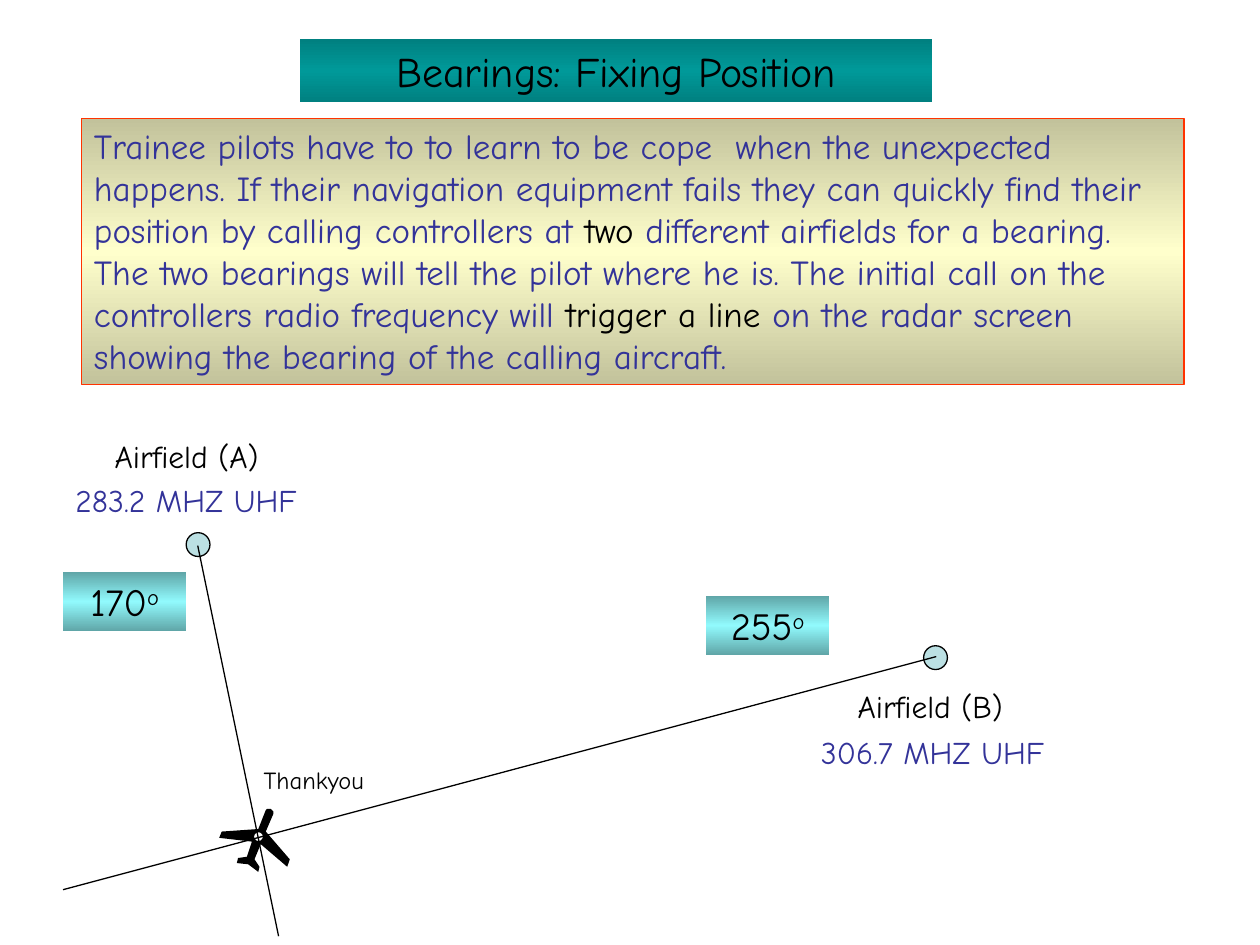
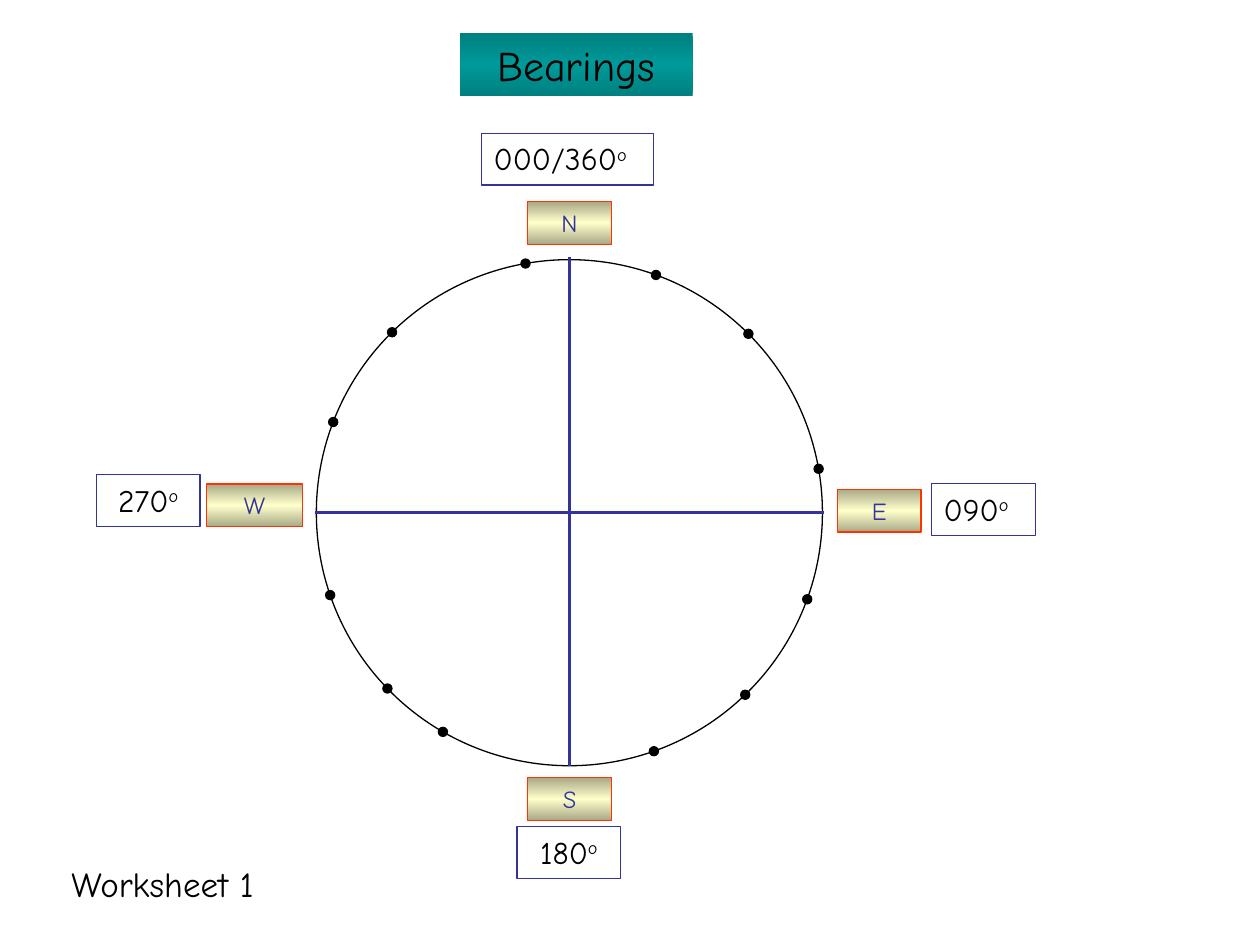
"""Build two slides on fixing a position with bearings."""
from copy import deepcopy
from math import cos, radians, sin

from lxml.etree import SubElement
from pptx import Presentation
from pptx.dml.color import RGBColor
from pptx.enum.shapes import MSO_CONNECTOR, MSO_SHAPE
from pptx.enum.text import MSO_ANCHOR, MSO_AUTO_SIZE, PP_ALIGN
from pptx.oxml.ns import qn
from pptx.util import Pt

COLORS = {
    "ink": "000000", "indigo": "333399", "red": "FF3300", "white": "FFFFFF",
    "airfield": "BBE0E3", "teal_edge": "008080", "teal": "009999",
    "story_edge": "C2C29B", "cream": "FFFFCC", "compass_edge": "A9A987",
    "aqua_edge": "60A6A8", "aqua": "91FAFD",
}
FONT = "Comic Neue"
DEGREE = "o"
LEFT, CENTER = PP_ALIGN.LEFT, PP_ALIGN.CENTER
TITLE_BAND = ("teal_edge", "teal")
STORY_BAND = ("story_edge", "cream")
COMPASS_BAND = ("compass_edge", "cream")
BEARING_BAND = ("aqua_edge", "aqua")


def paint(shape, fill=None, line=None):
    if isinstance(fill, tuple):
        shape.fill.gradient()
        shape.fill.gradient_angle = 90
        stops = shape.fill.gradient_stops
        for stop, name, position in zip(stops, fill, (0, 0.5)):
            stop.color.rgb = RGBColor.from_string(COLORS[name])
            stop.position = position
        stop_list = shape._element.spPr.find(".//" + qn("a:gsLst"))
        last_stop = deepcopy(stop_list[0])
        last_stop.set("pos", "100000")
        stop_list.append(last_stop)
    elif fill:
        shape.fill.solid()
        shape.fill.fore_color.rgb = RGBColor.from_string(COLORS[fill])
    else:
        shape.fill.background()
    if line:
        shape.line.color.rgb = RGBColor.from_string(COLORS[line])
        shape.line.width = Pt(0.75)
    else:
        shape.line.fill.background()


def write(shape, pieces, size, alignment):
    frame = shape.text_frame
    frame.word_wrap = True
    frame.auto_size = MSO_AUTO_SIZE.NONE
    frame.vertical_anchor = MSO_ANCHOR.TOP
    paragraph = frame.paragraphs[0]
    paragraph.alignment = alignment
    for text, color in pieces:
        run = paragraph.add_run()
        run.text = text
        run.font.name = FONT
        run.font.size = Pt(size)
        run.font.color.rgb = RGBColor.from_string(COLORS[color])
        if text == DEGREE:
            run._r.get_or_add_rPr().set("baseline", "30000")


presentation = Presentation()
presentation.slide_width, presentation.slide_height = Pt(720), Pt(540)
title_layout = presentation.slide_layouts[5]
fixing = presentation.slides.add_slide(title_layout)
worksheet = presentation.slides.add_slide(title_layout)

titles = [
    (fixing, "Bearings: Fixing Position", (171.2, 22.4, 361.6, 36)),
    (worksheet, "Bearings", (262.6, 19, 133.2, 36)),
]
for slide, text, box in titles:
    title = slide.shapes.title
    title.left, title.top, title.width, title.height = map(Pt, box)
    paint(title, TITLE_BAND)
    write(title, [(text, "ink")], 24, CENTER)

center_x, center_y, radius = 325.4, 293, 144.6
circles = [
    (fixing, 113.2, 311.2, 6.8, "airfield"),
    (fixing, 534.6, 375.8, 6.8, "airfield"),
    (worksheet, center_x, center_y, radius, None),
]
for bearing in (20, 45, 80, 110, 136, 160.5, 210, 226, 251, 291, 315.5, 350):
    angle = radians(bearing)
    circles.append((worksheet, center_x + radius * sin(angle),
                    center_y - radius * cos(angle), 2.6, "ink"))

story = [
    ("Trainee pilots have to to learn to be cope  when the unexpected happens. "
     "If their navigation equipment fails they can quickly find their position "
     "by calling controllers at ", "indigo"),
    ("two ", "ink"),
    ("different airfields for a bearing. The two bearings will tell the pilot "
     "where he is. The initial call on the controllers radio frequency will ", "indigo"),
    ("trigger a line", "ink"),
    (" on the radar screen showing the bearing of the calling aircraft.", "indigo"),
]
panels = [(fixing, (46.6, 67.6, 630, 152), STORY_BAND, "red", story, 20, LEFT)]
for text, left, top in (("170", 36, 327), ("255", 403.4, 340.6)):
    panels.append((fixing, (left, top, 70.4, 33.6), BEARING_BAND, None,
                   [(text, "ink"), (DEGREE, "ink")], 22, CENTER))
for text, left, top, width in (("N", 301.6, 115.2, 47.8), ("S", 301.6, 444.4, 47.8),
                               ("E", 478.6, 279.6, 47.8), ("W", 118, 276.6, 55)):
    panels.append((worksheet, (left, top, width, 24.4), COMPASS_BAND, "red",
                   [(text, "indigo")], 14, CENTER))
for text, left, top, width, alignment in (
        ("090", 532.2, 276.4, 59.4, LEFT), ("000/360", 275, 76.2, 98.4, LEFT),
        ("270", 55, 271.2, 59.4, CENTER), ("180", 295.4, 472.4, 59.4, CENTER)):
    panels.append((worksheet, (left, top, width, 29.6), None, "indigo",
                   [(text, "ink"), (DEGREE, "ink")], 18, alignment))

for slide, x, y, size, fill in circles:
    circle = slide.shapes.add_shape(
        MSO_SHAPE.OVAL, *map(Pt, (x - size, y - size, 2 * size, 2 * size)))
    circle.shadow.inherit = False
    paint(circle, fill, "ink")

for slide, box, fill, line, pieces, size, alignment in panels:
    panel = slide.shapes.add_shape(MSO_SHAPE.RECTANGLE, *map(Pt, box))
    panel.shadow.inherit = False
    paint(panel, fill, line)
    write(panel, pieces, size, alignment)

labels = [
    (fixing, "Airfield (A)", (58.4, 246.4, 149.8, 29), 18, "ink", LEFT),
    (fixing, "283.2 MHZ UHF", (36, 271.6, 165, 29), 18, "indigo", LEFT),
    (fixing, "Airfield (B)", (483, 388.8, 149.8, 29), 18, "ink", LEFT),
    (fixing, "306.7 MHZ UHF", (462, 415.6, 165, 29), 18, "indigo", LEFT),
    (fixing, "Thankyou", (143.6, 433.6, 76.4, 24), 14, "ink", LEFT),
    (worksheet, "Worksheet 1", (0, 489.6, 185.8, 31), 20, "ink", CENTER),
]
for slide, text, box, size, color, alignment in labels:
    label = slide.shapes.add_textbox(*map(Pt, box))
    write(label, [(text, color)], size, alignment)

plane_outline = [
    (202, 682), (207, 670), (228, 688), (230, 682), (211, 660), (217, 646),
    (217, 644), (216, 643), (215, 642), (213, 642), (212, 642), (211, 643),
    (205, 658), (176, 660), (174, 665), (200, 668), (196, 680), (189, 681),
    (188, 685), (197, 686), (205, 692), (206, 688),
]
builder = fixing.shapes.build_freeform(*plane_outline[0], scale=Pt(0.72))
builder.add_line_segments(plane_outline[1:], close=True)
plane = builder.convert_to_shape()
plane.shadow.inherit = False
paint(plane, "ink")
cockpit = fixing.shapes.add_shape(MSO_SHAPE.OVAL, *map(Pt, (144.8, 475.2, 5.8, 5.8)))
cockpit.shadow.inherit = False
paint(cockpit, "white", "ink")

lines = [
    (fixing, (113, 311.8, 159.2, 535), "ink", 0.75),
    (fixing, (535, 375.2, 36, 508.4), "ink", 0.75),
    (worksheet, (180, center_y, 470.8, center_y), "indigo", 1.5),
    (worksheet, (center_x, 437.8, center_x, 146.9), "indigo", 1.5),
]
for slide, ends, color, width in lines:
    connector = slide.shapes.add_connector(MSO_CONNECTOR.STRAIGHT, *map(Pt, ends))
    connector.line.color.rgb = RGBColor.from_string(COLORS[color])
    connector.line.width = Pt(width)
    SubElement(connector._element.spPr, qn("a:effectLst"))

presentation.save("out.pptx")
